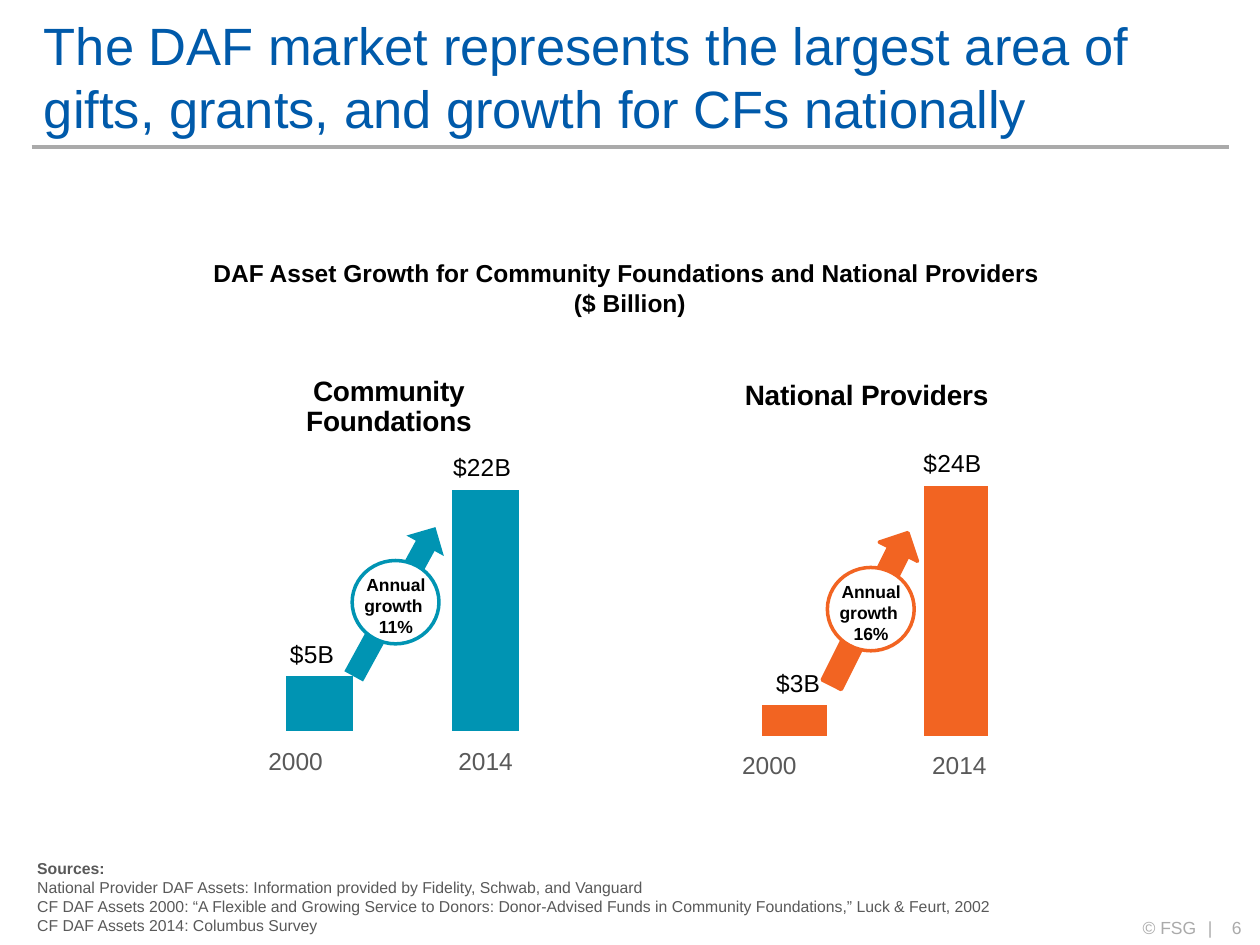
from dataclasses import dataclass

import lxml.etree
import pptx
import pptx.chart.data
import pptx.dml.color
import pptx.enum.chart
import pptx.enum.shapes
import pptx.enum.text
import pptx.oxml
import pptx.oxml.ns
import pptx.util

Cm = pptx.util.Cm
Pt = pptx.util.Pt
Align = pptx.enum.text.PP_ALIGN
Shape = pptx.enum.shapes.MSO_SHAPE


@dataclass(frozen=True)
class Theme:
    font: str = "Arial"
    title: str = "005AAA"
    text: str = "000000"
    muted: str = "595959"
    footer: str = "AAAAAA"
    paper: str = "FFFFFF"
    community: str = "0094B3"
    national: str = "F26422"
    title_size: int = 30
    chart_size: int = 18
    chart_title_size: int = 16
    body_size: int = 14
    small_size: int = 10
    source_size: int = 9


THEME = Theme()


@dataclass
class Panel:
    name: str
    values: tuple
    label_shifts: tuple  # sideways, share of chart width
    axis_max: int
    plot: tuple  # x, y, width, height as shares of the chart
    color: str
    growth: str
    chart_at: tuple
    years_at: tuple
    arrow_at: tuple
    arrow_turn: float
    arrow_outline: bool


PANELS = (
    Panel("Community Foundations", (5, 22), (-0.02, -0.01), 25,
          (0.076, 0.242, 0.924, 0.64), THEME.community, "11%",
          (4.21, 7.11), (5.16, 14.91), (6.24, 11.7), 298.7, False),
    Panel("National Providers", (3, 24), (0.01, -0.01), 30,
          (0.076, 0.153, 0.897, 0.73), THEME.national, "16%",
          (13.84, 7.2), (14.71, 14.99), (15.82, 11.84), 296.6, True),
)
CHART_SIZE = (7.26, 8.66)
YEAR_STEP = 3.83
LABEL_LIFT = 0.05  # label centre above the bar top, share of chart height


def rgb(color):
    return pptx.dml.color.RGBColor.from_string(color)


def style_font(font, size, color, bold=False):
    font.name = THEME.font
    font.size = Pt(size)
    font.bold = bold
    font.color.rgb = rgb(color)


def add_text(shapes, lines, left, top, width, height, size, color,
             bold=False, align=Align.LEFT, wrap=True):
    box = shapes.add_textbox(Cm(left), Cm(top), Cm(width), Cm(height))
    frame = box.text_frame
    frame.text = "\n".join(lines)
    frame.word_wrap = wrap
    for para in frame.paragraphs:
        para.alignment = align
        for span in para.runs:
            style_font(span.font, size, color, bold)
    return box


def add_solid(shapes, kind, left, top, width, height, fill, line=None):
    shape = shapes.add_shape(kind, Cm(left), Cm(top), Cm(width), Cm(height))
    shape.shadow.inherit = False
    shape.fill.solid()
    shape.fill.fore_color.rgb = rgb(fill)
    if line:
        shape.line.color.rgb = rgb(line)
        shape.line.width = Pt(2)
    else:
        shape.line.fill.background()
    return shape


def add_title(page, text):
    title = page.shapes.title
    title.left, title.top, title.width, title.height = (
        Cm(0.63), Cm(0.13), Cm(24.13), Cm(2.79))
    frame = title.text_frame
    frame.text = text
    frame.word_wrap = True
    frame.auto_size = pptx.enum.text.MSO_AUTO_SIZE.NONE
    frame.vertical_anchor = pptx.enum.text.MSO_ANCHOR.MIDDLE
    frame.paragraphs[0].alignment = Align.LEFT
    style_font(frame.paragraphs[0].runs[0].font, THEME.title_size, THEME.title)


def add_rule(page):
    rule = page.shapes.add_connector(
        pptx.enum.shapes.MSO_CONNECTOR.STRAIGHT,
        Cm(0.64), Cm(2.97), Cm(24.77), Cm(2.97))
    rule.line.color.rgb = rgb(THEME.footer)
    rule.line.width = Pt(2.25)
    lxml.etree.SubElement(rule._element.spPr, pptx.oxml.ns.qn("a:effectLst"))


def manual_layout(**settings):
    """Chart layout element; settings keep the order of the schema."""
    parts = "".join(f'<c:{key} val="{value}"/>' for key, value in settings.items())
    return pptx.oxml.parse_xml(
        f'<c:layout {pptx.oxml.ns.nsdecls("c")}>'
        f"<c:manualLayout>{parts}</c:manualLayout></c:layout>")


def set_plot_area(chart, plot):
    x, y, width, height = plot
    area = chart._chartSpace.chart.plotArea
    for old in area.findall(pptx.oxml.ns.qn("c:layout")):
        area.remove(old)
    area.insert(0, manual_layout(layoutTarget="inner", xMode="edge", yMode="edge",
                                 x=x, y=y, w=width, h=height))


def add_bar_labels(series, panel):
    labels = series.data_labels
    labels.show_value = True
    labels.number_format = '"$"#,##0'
    labels.number_format_is_linked = False
    style_font(labels.font, THEME.body_size, THEME.text, bold=True)
    for leader in labels._element.findall(pptx.oxml.ns.qn("c:showLeaderLines")):
        leader.set("val", "0")
    for index, (value, shift) in enumerate(zip(panel.values, panel.label_shifts)):
        label = series.points[index].data_label
        label.text_frame.text = f"${value}B"
        span = label.text_frame.paragraphs[0].runs[0]
        style_font(span.font, THEME.body_size, THEME.text)
        # Move the label from the bar's centre to just above its top
        half_bar = panel.plot[3] * value / panel.axis_max / 2
        element = labels._element.findall(pptx.oxml.ns.qn("c:dLbl"))[index]
        element.insert(1, manual_layout(x=shift, y=round(-half_bar - LABEL_LIFT, 3)))


def add_column_chart(page, panel):
    data = pptx.chart.data.CategoryChartData()
    data.categories = ["1", "2"]
    data.add_series("Series 1", panel.values)
    chart = page.shapes.add_chart(
        pptx.enum.chart.XL_CHART_TYPE.COLUMN_STACKED,
        *map(Cm, panel.chart_at + CHART_SIZE), data).chart
    style_font(chart.font, THEME.chart_size, THEME.text)
    chart.has_legend = False
    chart.has_title = True
    chart.chart_title.text_frame.text = panel.name
    heading = chart.chart_title.text_frame.paragraphs[0].runs[0]
    style_font(heading.font, THEME.chart_title_size, THEME.text, bold=True)
    chart.category_axis.visible = False
    chart.value_axis.visible = False
    chart.value_axis.has_major_gridlines = False
    chart.value_axis.minimum_scale = 0
    chart.value_axis.maximum_scale = panel.axis_max
    bars = chart.plots[0]
    bars.gap_width = 150
    bars.overlap = 100
    bars.vary_by_categories = False
    bars.series[0].format.fill.solid()
    bars.series[0].format.fill.fore_color.rgb = rgb(panel.color)
    add_bar_labels(bars.series[0], panel)
    set_plot_area(chart, panel.plot)


def add_years(page, panel):
    left, top = panel.years_at
    for index, year in enumerate(("2000", "2014")):
        add_text(page.shapes, [year], left + index * YEAR_STEP, top, 1.63, 0.86,
                 THEME.body_size, THEME.muted, wrap=False)


def add_growth_badge(page, panel):
    left, top = panel.arrow_at
    arrow = add_solid(page.shapes, Shape.RIGHT_ARROW, left, top, 3.43, 0.86,
                      panel.color, panel.color if panel.arrow_outline else None)
    arrow.rotation = panel.arrow_turn
    badge = page.shapes.add_group_shape()
    add_solid(badge.shapes, Shape.OVAL, left + 0.86, top - 0.4, 1.75, 1.68,
              THEME.paper, panel.color)
    add_text(badge.shapes, ["Annual growth ", panel.growth], left + 0.33, top - 0.25,
             2.82, 1.55, THEME.small_size, THEME.text, True, Align.CENTER)


def add_footer(page):
    for text, left, width, align, wrap in (
            ("6", 24.46, 0.94, Align.CENTER, False),
            ("© FSG ", 22.33, 2.13, Align.RIGHT, True),
            ("| ", 23.55, 1.24, Align.RIGHT, True)):
        add_text(page.shapes, [text], left, 18.36, width, 0.69,
                 THEME.small_size, THEME.footer, align=align, wrap=wrap)


def main():
    deck = pptx.Presentation()
    deck.slide_width, deck.slide_height = Cm(25.4), Cm(19.05)
    page = deck.slides.add_slide(deck.slide_layouts[5])

    # Frame of the page
    add_footer(page)
    add_rule(page)
    add_title(page, "The DAF market represents the largest area of gifts, grants, "
                    "and growth for CFs nationally")

    # Charts with their years
    add_text(page.shapes,
             ["DAF Asset Growth for Community Foundations and National Providers ",
              "($ Billion)"],
             3.39, 5.08, 18.62, 1.45, THEME.body_size, THEME.text, True, Align.CENTER)
    for panel in PANELS:
        add_column_chart(page, panel)
        add_years(page, panel)

    # Sources
    sources = add_text(page.shapes, [
        "Sources:",
        "National Provider DAF Assets: Information provided by Fidelity, Schwab, "
        "and Vanguard",
        "CF DAF Assets 2000: “A Flexible and Growing Service to Donors: Donor-Advised "
        "Funds in Community Foundations,” Luck & Feurt, 2002",
        "CF DAF Assets 2014: Columbus Survey",
    ], 0.5, 17.18, 20.14, 1.8, THEME.source_size, THEME.muted)
    sources.text_frame.paragraphs[0].runs[0].font.bold = True

    # Growth arrows
    for panel in PANELS:
        add_growth_badge(page, panel)

    deck.save("out.pptx")


if __name__ == "__main__":
    main()
